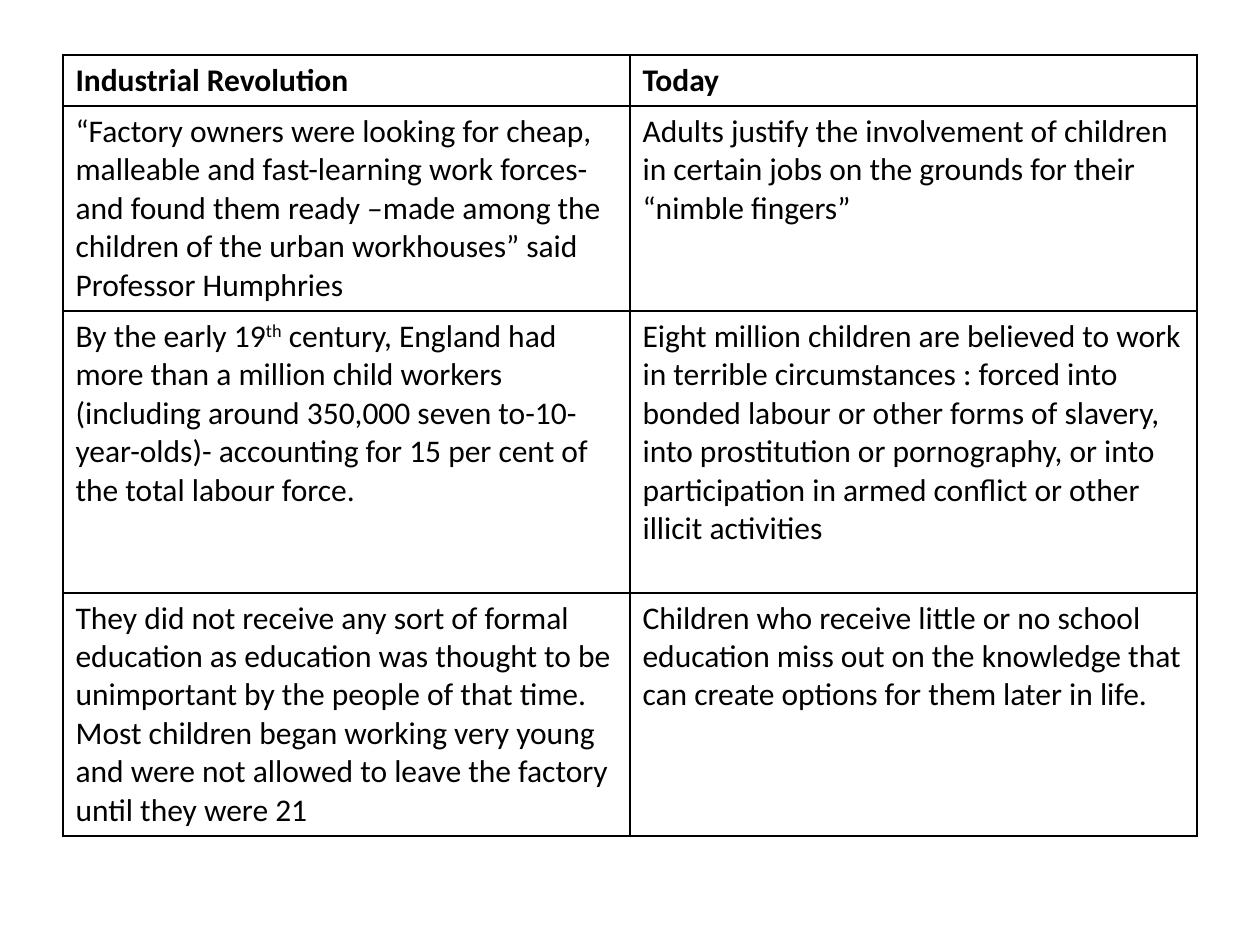
from lxml import etree
from pptx import Presentation
from pptx.dml.color import RGBColor
from pptx.oxml.ns import qn
from pptx.util import Cm, Pt

INK = "000000"
ROW_HEIGHTS = [1.03, 4.13, 5.68, 4.9]

# Each cell is a list of paragraphs; text between ^ marks is superscript
COMPARISON = [
    (["Industrial Revolution"], ["Today"]),
    (["“Factory owners were looking for cheap, malleable and fast-learning work forces- "
      "and found them ready –made among the children of the urban workhouses” said "
      "Professor Humphries"],
     ["Adults justify the involvement of children in certain jobs on the grounds for their",
      "“nimble fingers”"]),
    (["By the early 19^th^ century, England had more than a million child workers "
      "(including around 350,000 seven to-10-year-olds)- accounting for 15 per cent of "
      "the total labour force."],
     ["Eight million children are believed to work in terrible circumstances : forced into "
      "bonded labour or other forms of slavery, into prostitution or pornography, or into "
      "participation in armed conflict or other illicit activities"]),
    (["They did not receive any sort of formal education as education was thought to be "
      "unimportant by the people of that time.",
      "Most children began working very young and were not allowed to leave the factory "
      "until they were 21"],
     ["Children who receive little or no school education miss out on the knowledge that "
      "can create options for them later in life."]),
]


def colour(value):
    return RGBColor.from_string(value)


def add_borders(cell, value, width):
    properties = cell._tc.get_or_add_tcPr()
    for position, side in enumerate(("a:lnL", "a:lnR", "a:lnT", "a:lnB")):
        line = etree.Element(qn(side), w=str(width))
        fill = etree.SubElement(line, qn("a:solidFill"))
        etree.SubElement(fill, qn("a:srgbClr"), val=value)
        properties.insert(position, line)


def write_cell(cell, paragraphs, bold):
    frame = cell.text_frame
    for number, content in enumerate(paragraphs):
        para = frame.add_paragraph() if number else frame.paragraphs[0]
        for part, words in enumerate(content.split("^")):
            span = para.add_run()
            span.text = words
            span.font.name = "Calibri"
            span.font.size = Pt(18)
            span.font.bold = bold
            span.font.color.rgb = colour(INK)
            if part % 2:
                span.font._element.set("baseline", "30000")


def add_comparison_table(page, left, top, width, heights):
    columns = len(COMPARISON[0])
    frame = page.shapes.add_table(len(COMPARISON), columns, Cm(left), Cm(top),
                                  Cm(width), Cm(sum(heights)))
    table = frame.table
    table.horz_banding = False
    for column in table.columns:
        column.width = Cm(width / columns)
    for index, (row, texts) in enumerate(zip(table.rows, COMPARISON)):
        row.height = Cm(heights[index])
        for cell, paragraphs in zip(row.cells, texts):
            cell.fill.background()
            add_borders(cell, INK, Pt(1))
            write_cell(cell, paragraphs, bold=index == 0)


def main():
    deck = Presentation()
    deck.slide_width, deck.slide_height = Cm(25.4), Cm(19.05)
    page = deck.slides.add_slide(deck.slide_layouts[6])
    # Then-and-now table
    add_comparison_table(page, 1.27, 1.11, 22.86, ROW_HEIGHTS)
    deck.save("out.pptx")


if __name__ == "__main__":
    main()
